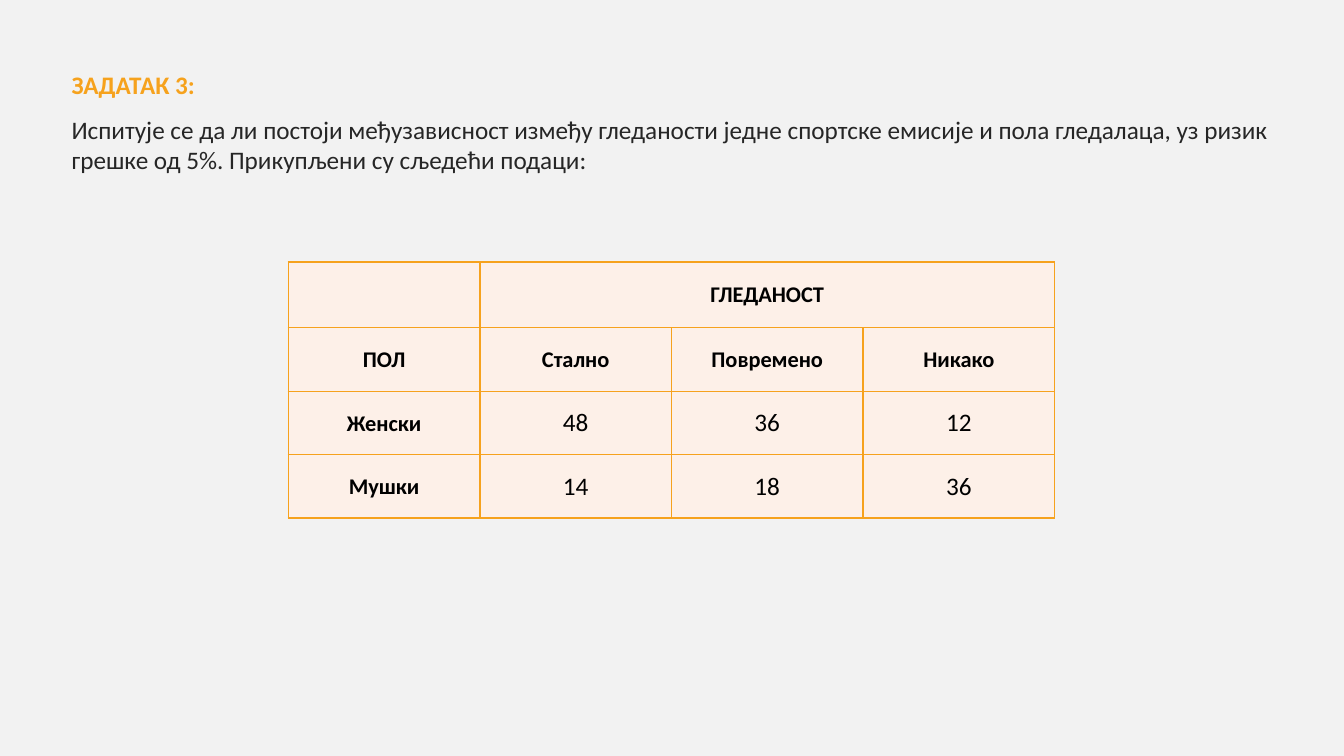
from pptx import Presentation
from pptx.dml.color import RGBColor
from pptx.enum.text import MSO_ANCHOR, PP_ALIGN
from pptx.oxml import parse_xml
from pptx.oxml.ns import nsdecls
from pptx.util import Inches, Pt

BACKGROUND = RGBColor(0xF2, 0xF2, 0xF2)
ORANGE = RGBColor(0xF6, 0xA2, 0x1D)
CREAM = RGBColor(0xFD, 0xF0, 0xE8)
DARK = RGBColor(0x26, 0x26, 0x26)
BLACK = RGBColor(0, 0, 0)
FONT = "Calibri"

HEADING = "ЗАДАТАК 3:"
QUESTION = (
    "Испитује се да ли постоји међузависност између гледаности једне спортске "
    "емисије и пола гледалаца, уз ризик грешке од 5%. Прикупљени су сљедећи подаци:"
)
VIEWING = [
    ["", "ГЛЕДАНОСТ", "", ""],
    ["ПОЛ", "Стално", "Повремено", "Никако"],
    ["Женски", "48", "36", "12"],
    ["Мушки", "14", "18", "36"],
]
COLUMN_WIDTH = Inches(1.9)
ROW_HEIGHTS = [Inches(0.65)] + [Inches(0.63)] * 3


def format_runs(p, size, color, bold):
    for r in p.runs:
        r.font.name = FONT
        r.font.size = Pt(size)
        r.font.bold = bold
        r.font.color.rgb = color


def fill_task(sp):
    sp.left, sp.top = Inches(0.61), Inches(0.64)
    sp.width, sp.height = Inches(12.11), Inches(6.21)
    tf = sp.text_frame
    tf.text = f"{HEADING}\n{QUESTION}"
    for p, color, bold, gap in zip(tf.paragraphs, (ORANGE, DARK), (True, False), (0, 10)):
        pPr = p._p.get_or_add_pPr()
        pPr.set("marL", "0")
        pPr.set("indent", "0")
        pPr.append(parse_xml(f"<a:buNone {nsdecls('a')}/>"))
        p.space_before = Pt(gap)
        format_runs(p, 18, color, bold)


def add_borders(cell):
    tcPr = cell._tc.get_or_add_tcPr()
    for side in "LRTB":
        tcPr.append(parse_xml(
            f'<a:ln{side} {nsdecls("a")} w="{Pt(1)}"><a:solidFill>'
            f'<a:srgbClr val="{ORANGE}"/></a:solidFill></a:ln{side}>'
        ))


def format_cell(cell, text):
    add_borders(cell)
    cell.fill.solid()
    cell.fill.fore_color.rgb = CREAM
    cell.vertical_anchor = MSO_ANCHOR.MIDDLE
    cell.margin_left = cell.margin_right = cell.margin_top = Inches(0.01)
    cell.margin_bottom = 0
    cell.text_frame.text = text
    p = cell.text_frame.paragraphs[0]
    p.alignment = PP_ALIGN.CENTER
    is_count = text.isdigit()
    format_runs(p, 18 if is_count else 16, BLACK, not is_count)


def add_viewing_table(slide):
    columns = len(VIEWING[0])
    table = slide.shapes.add_table(
        len(VIEWING), columns, Inches(2.86), Inches(2.6),
        COLUMN_WIDTH * columns, sum(ROW_HEIGHTS),
    ).table
    for column in table.columns:
        column.width = COLUMN_WIDTH
    for i, (height, values) in enumerate(zip(ROW_HEIGHTS, VIEWING)):
        table.rows[i].height = height
        for j, text in enumerate(values):
            format_cell(table.cell(i, j), text)
    table.cell(0, 1).merge(table.cell(0, columns - 1))


def main():
    prs = Presentation()
    prs.slide_width, prs.slide_height = Inches(13.33), Inches(7.5)
    slide = prs.slides.add_slide(prs.slide_layouts[1])
    slide.background.fill.solid()
    slide.background.fill.fore_color.rgb = BACKGROUND
    title, task = slide.placeholders
    title._element.getparent().remove(title._element)
    fill_task(task)
    add_viewing_table(slide)
    prs.save("out.pptx")


if __name__ == "__main__":
    main()
